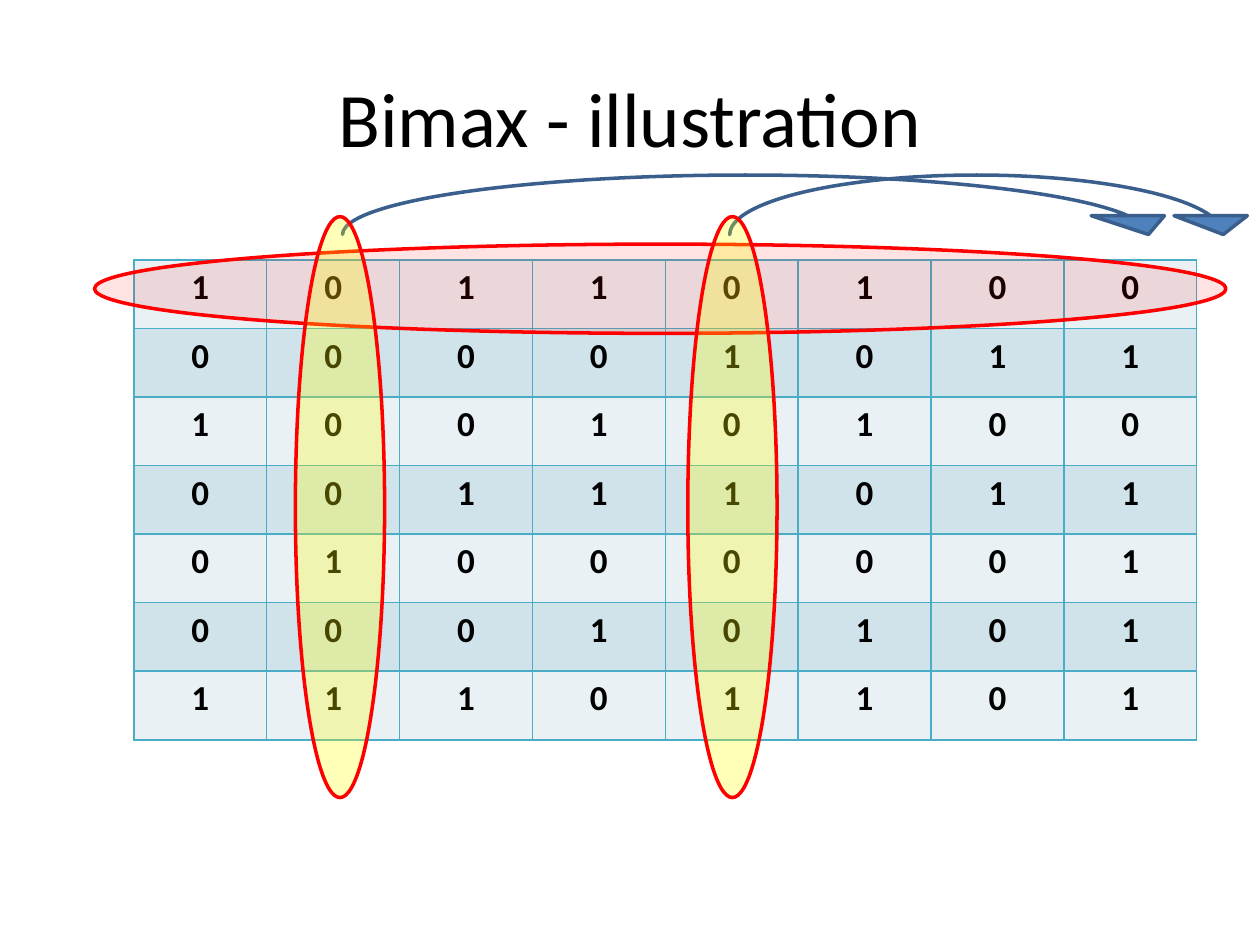
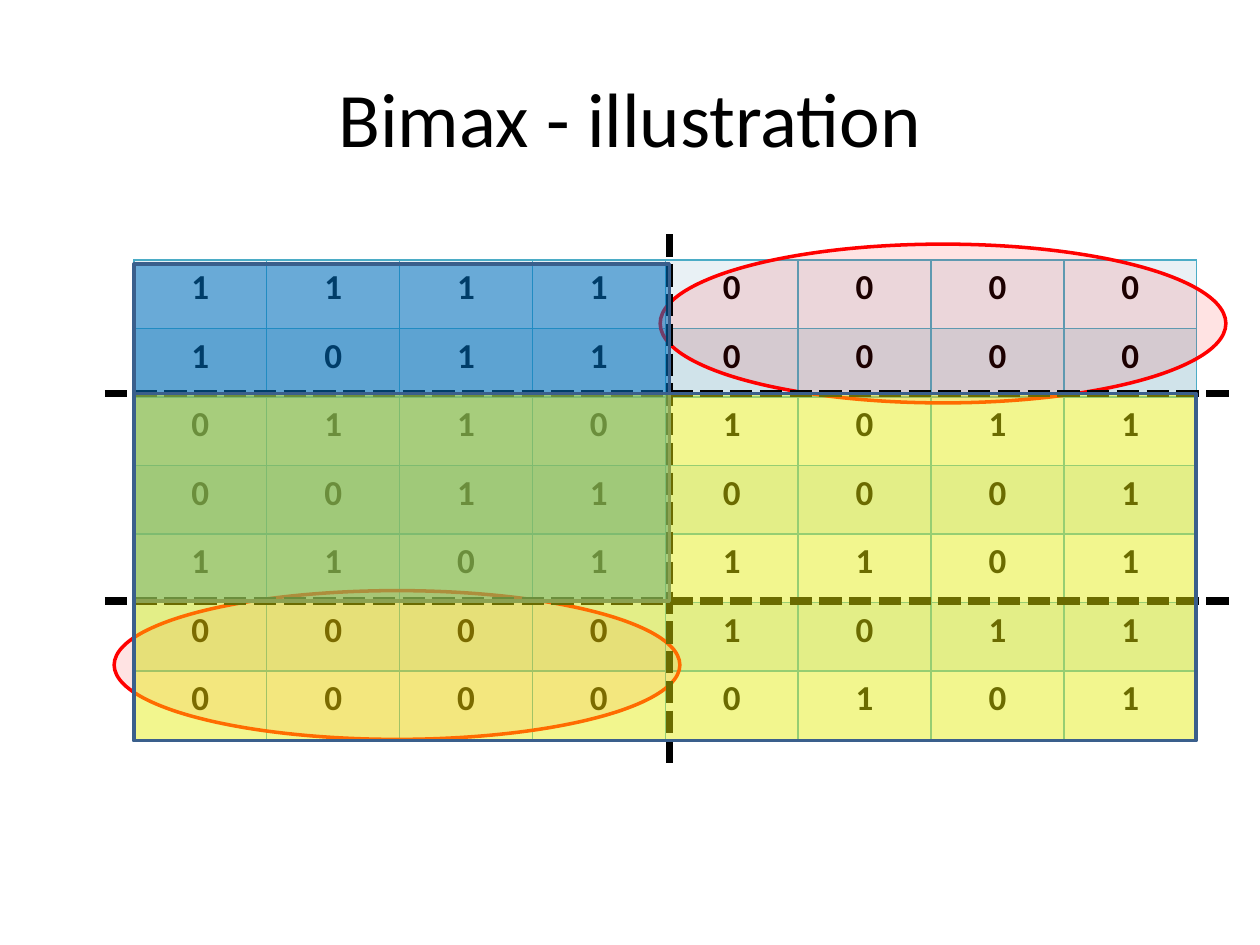
import lxml.etree
import pptx
import pptx.dml.color
import pptx.enum.dml
import pptx.enum.shapes
import pptx.enum.text
import pptx.oxml
import pptx.oxml.ns
import pptx.util

Pt = pptx.util.Pt
RGBColor = pptx.dml.color.RGBColor
MSO_SHAPE = pptx.enum.shapes.MSO_SHAPE
qn = pptx.oxml.ns.qn

BLACK = RGBColor(0x00, 0x00, 0x00)
RED = RGBColor(0xFF, 0x00, 0x00)
YELLOW = RGBColor(0xFF, 0xFF, 0x00)
BLUE = RGBColor(0x00, 0x70, 0xC0)
ARROW_BLUE = RGBColor(0x4F, 0x81, 0xBD)
OUTLINE_BLUE = RGBColor(0x3A, 0x5F, 0x8C)
GRID_TEAL = RGBColor(0x4B, 0xAC, 0xC6)
ROW_FILLS = (RGBColor(0xE9, 0xF1, 0xF5), RGBColor(0xD0, 0xE3, 0xEA))

FONT = "Calibri"
TABLE_LEFT, TABLE_TOP = 76.5, 148.5
COL_WIDTH, ROW_HEIGHT = 75.94, 39.2

INPUT_MATRIX = ("10110100", "00001011", "10010100", "00111011",
                "01000001", "00010101", "11101101")
SORTED_MATRIX = ("11110000", "10110000", "01101011", "00110001",
                 "11011101", "00001011", "00000101")


def style_run(r, size, bold=False):
    r.font.name = FONT
    r.font.size = Pt(size)
    r.font.bold = bold
    r.font.color.rgb = BLACK


def add_title_slide(prs, title):
    s = prs.slides.add_slide(prs.slide_layouts[5])
    sp = s.shapes.title
    sp.left, sp.top, sp.width, sp.height = Pt(36), Pt(21.6), Pt(648), Pt(90)
    tf = sp.text_frame
    tf.text = title
    tf.vertical_anchor = pptx.enum.text.MSO_ANCHOR.MIDDLE
    p = tf.paragraphs[0]
    p.alignment = pptx.enum.text.PP_ALIGN.CENTER
    style_run(p.runs[0], 44)
    return s


def set_borders(cell):
    tc_pr = cell._tc.get_or_add_tcPr()
    for i, side in enumerate(("lnL", "lnR", "lnT", "lnB")):
        tc_pr.insert(i, pptx.oxml.parse_xml(
            f'<a:{side} {pptx.oxml.ns.nsdecls("a")} w="{Pt(1)}"><a:solidFill>'
            f'<a:srgbClr val="{GRID_TEAL}"/></a:solidFill></a:{side}>'))


def add_matrix(s, matrix):
    rows, cols = len(matrix), len(matrix[0])
    table = s.shapes.add_table(rows, cols, Pt(TABLE_LEFT), Pt(TABLE_TOP),
                               Pt(cols * COL_WIDTH), Pt(rows * ROW_HEIGHT)).table
    table.first_row = table.horz_banding = False
    for column in table.columns:
        column.width = Pt(COL_WIDTH)
    for i, digits in enumerate(matrix):
        table.rows[i].height = Pt(ROW_HEIGHT)
        for j, digit in enumerate(digits):
            cell = table.cell(i, j)
            cell.text = digit
            cell.fill.solid()
            cell.fill.fore_color.rgb = ROW_FILLS[i % 2]
            set_borders(cell)
            p = cell.text_frame.paragraphs[0]
            p.alignment = pptx.enum.text.PP_ALIGN.CENTER
            style_run(p.runs[0], 20, bold=True)


def add_marker(s, kind, left, top, width, height, fill, line, opacity=100):
    sp = s.shapes.add_shape(kind, Pt(left), Pt(top), Pt(width), Pt(height))
    sp.shadow.inherit = False
    sp.fill.solid()
    sp.fill.fore_color.rgb = fill
    sp.line.color.rgb = line
    sp.line.width = Pt(2)
    if opacity < 100:
        color = sp._element.spPr.find(qn("a:solidFill"))[0]
        lxml.etree.SubElement(color, qn("a:alpha"), val=str(opacity * 1000))
    return sp


def add_red_ellipse(s, left, top, width, height):
    add_marker(s, MSO_SHAPE.OVAL, left, top, width, height, RED, RED, 11)


def add_column_ellipse(s, center_x):
    length, thickness, center_y = 332, 51, 289.8
    sp = add_marker(s, MSO_SHAPE.OVAL, center_x - length / 2,
                    center_y - thickness / 2, length, thickness, YELLOW, RED, 28)
    sp.rotation = 90


def add_move_arrow(s, left, width):
    sp = add_marker(s, MSO_SHAPE.CURVED_DOWN_ARROW, left, 100, width, 34,
                    ARROW_BLUE, OUTLINE_BLUE)
    for i, value in enumerate((0, 1.233, 0.316)):
        sp.adjustments[i] = value


def add_dashed_line(s, x1, y1, x2, y2):
    line = s.shapes.add_connector(pptx.enum.shapes.MSO_CONNECTOR.STRAIGHT,
                                  Pt(x1), Pt(y1), Pt(x2), Pt(y2))
    line.line.color.rgb = BLACK
    line.line.width = Pt(4.25)
    line.line.dash_style = pptx.enum.dml.MSO_LINE.SQUARE_DOT
    line.line._ln.find(qn("a:prstDash")).set("val", "sysDash")
    lxml.etree.SubElement(line._element.spPr, qn("a:effectLst"))


def add_bicluster(s, top, width, height, fill, opacity):
    add_marker(s, MSO_SHAPE.RECTANGLE, TABLE_LEFT, top, width, height,
               fill, OUTLINE_BLUE, opacity)


def main():
    prs = pptx.Presentation()
    prs.slide_width, prs.slide_height = Pt(720), Pt(540)

    # Template row, and the columns that move to the right
    s = add_title_slide(prs, "Bimax - illustration")
    add_matrix(s, INPUT_MATRIX)
    add_red_ellipse(s, 54, 139.5, 646.5, 51)
    add_move_arrow(s, 195.75, 481.5)
    add_move_arrow(s, 417, 303)
    for center_x in (194.25, 418.5):
        add_column_ellipse(s, center_x)

    # Sorted matrix with its zero blocks and two overlapping submatrices
    s = add_title_slide(prs, "Bimax - illustration")
    add_matrix(s, SORTED_MATRIX)
    add_red_ellipse(s, 377.25, 139.5, 323.25, 90.75)
    add_red_ellipse(s, 65.25, 337.5, 323.25, 85)
    split_x, split_top, split_bottom = 382.5, 224.75, 343.5
    for y in (split_top, split_bottom):
        add_dashed_line(s, 60, y, 705.75, y)
    add_dashed_line(s, split_x, 134, split_x, 440)
    add_bicluster(s, 151, split_x - TABLE_LEFT, split_bottom - 151, BLUE, 55)
    add_bicluster(s, split_top, 607, 198.5, YELLOW, 42)

    prs.save("out.pptx")


if __name__ == "__main__":
    main()
